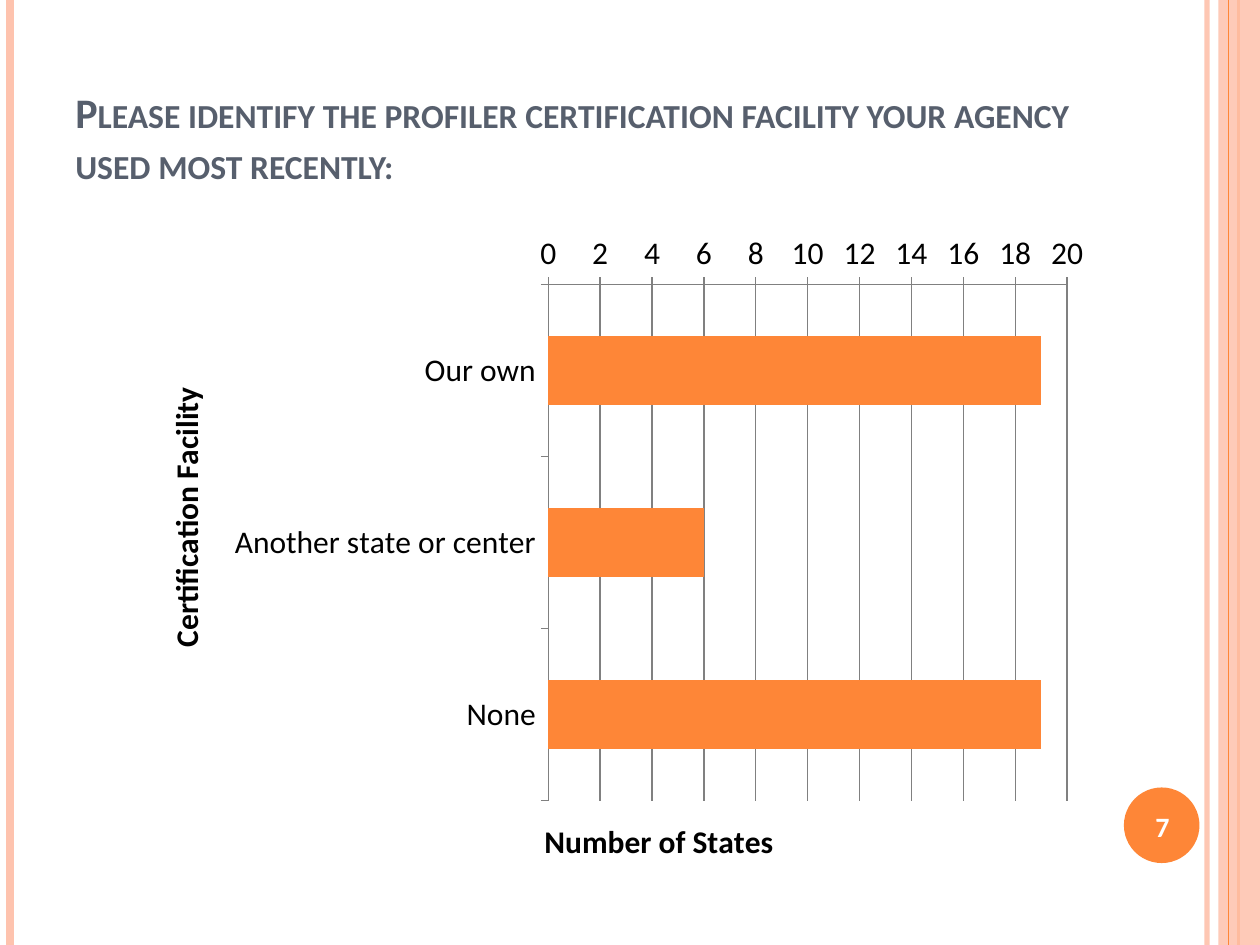
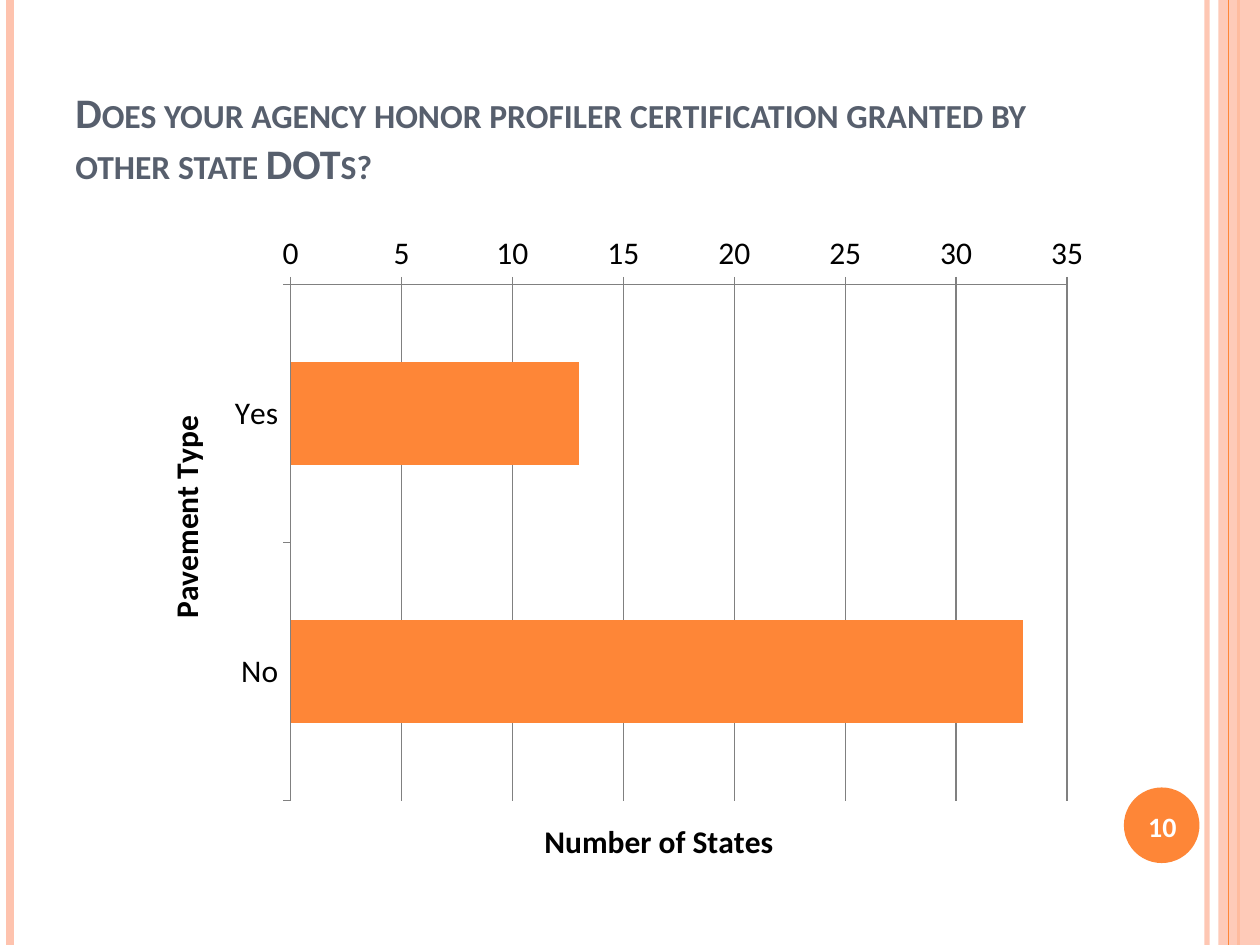
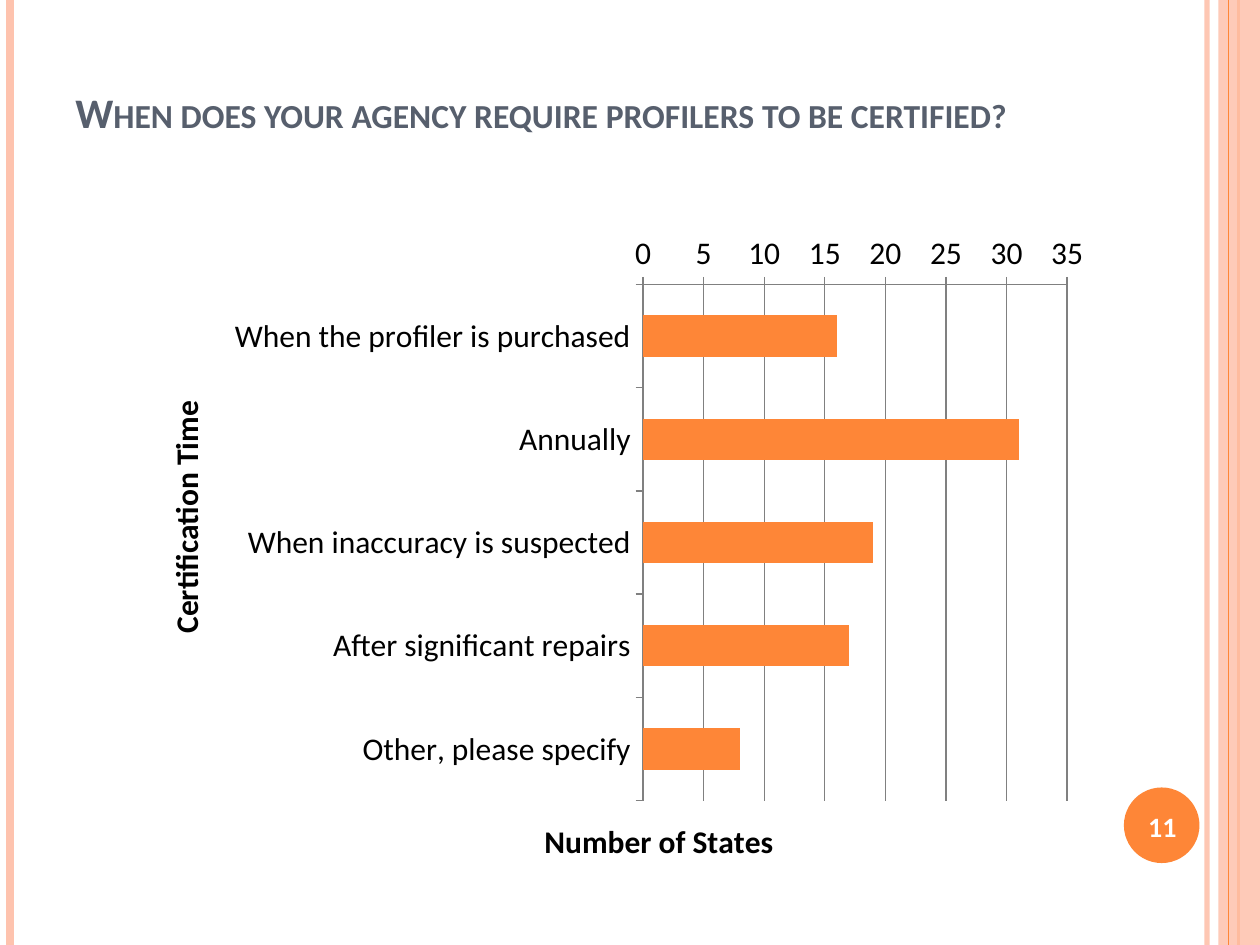
from lxml.etree import SubElement
from pptx import Presentation
from pptx.chart.data import CategoryChartData
from pptx.dml.color import RGBColor
from pptx.enum.chart import XL_CHART_TYPE as ChartType, XL_TICK_MARK as TickMark
from pptx.enum.shapes import MSO_CONNECTOR as Connector, MSO_SHAPE as Shape
from pptx.enum.text import MSO_ANCHOR as Anchor, PP_ALIGN as Align
from pptx.oxml.ns import qn
from pptx.util import Inches, Pt

WIDTH, HEIGHT = 10, 7.5
FONT = "Calibri"
ORANGE = RGBColor(0xFE, 0x86, 0x37)
PEACH = RGBColor(0xFE, 0xC3, 0xAE)
SLATE = RGBColor(0x57, 0x5F, 0x6D)
GRID_GREY = RGBColor(0x80, 0x80, 0x80)
BLACK = RGBColor(0, 0, 0)
WHITE = RGBColor(0xFF, 0xFF, 0xFF)

# Page number, question, category axis title, answers with counts of states
SURVEY = [
    (7, "Please identify the profiler certification facility your agency "
        "used most recently:",
     "Certification Facility",
     {"Our own": 19, "Another state or center": 6, "None": 19}),
    (10, "Does your agency honor profiler certification granted by "
         "other state DOTs?",
     "Pavement Type", {"Yes": 13, "No": 33}),
    (11, "When does your agency require profilers to be certified?",
     "Certification Time",
     {"When the profiler is purchased": 16, "Annually": 31,
      "When inaccuracy is suspected": 19, "After significant repairs": 17,
      "Other, please specify": 8}),
]


def area(left, top, width, height):
    return [Inches(length) for length in (left, top, width, height)]


def set_opacity(color_format_parent, percent):
    """Add an alpha value to the solid colour inside the given XML element."""
    color = next(color_format_parent.iter(qn("a:srgbClr")))
    SubElement(color, qn("a:alpha")).set("val", str(percent * 1000))


def style_font(font, size, color, bold=False):
    font.name, font.size, font.bold = FONT, Pt(size), bold
    font.color.rgb = color


def add_text(page, text, place, size, color, bold=True, align=Align.LEFT,
             anchor=Anchor.TOP, small_caps=False):
    frame = page.shapes.add_textbox(*area(*place)).text_frame
    frame.word_wrap = True
    frame.vertical_anchor = anchor
    para = frame.paragraphs[0]
    para.alignment = align
    span = para.add_run()
    span.text = text
    style_font(span.font, size, color, bold)
    if small_caps:
        span.font._element.set("cap", "small")


def add_stripe(page, x, color, weight, opacity=100):
    stripe = page.shapes.add_connector(
        Connector.STRAIGHT, Inches(x), 0, Inches(x), Inches(HEIGHT))
    stripe.line.color.rgb = color
    stripe.line.width = Pt(weight)
    properties = stripe._element.spPr
    if opacity < 100:
        set_opacity(properties, opacity)
    SubElement(properties, qn("a:effectLst"))


def add_filled(page, kind, place, color, opacity=100):
    shape = page.shapes.add_shape(kind, *area(*place))
    shape.shadow.inherit = False
    shape.fill.solid()
    shape.fill.fore_color.rgb = color
    shape.line.fill.background()
    if opacity < 100:
        set_opacity(shape._element.spPr, opacity)


def add_frame(page, number):
    # Stripes along both sides and the page number badge
    add_stripe(page, 9.58, PEACH, 3, opacity=93)
    add_stripe(page, 0.08, PEACH, 4.5)
    add_stripe(page, 9.83, ORANGE, 1.5)
    add_filled(page, Shape.RECTANGLE, (9.67, 0, WIDTH - 9.67, HEIGHT), PEACH, opacity=87)
    add_stripe(page, 9.75, ORANGE, 0.75)
    add_filled(page, Shape.OVAL, (8.92, 6.25, 0.6, 0.6), ORANGE)
    add_text(page, str(number), (8.89, 6.27, 0.67, 0.57), size=16, color=WHITE,
             align=Align.CENTER, anchor=Anchor.MIDDLE)


def style_axis(axis, title):
    axis.major_tick_mark = TickMark.OUTSIDE
    axis.minor_tick_mark = TickMark.NONE
    axis.format.line.color.rgb = GRID_GREY
    style_font(axis.tick_labels.font, 18, BLACK)
    para = axis.axis_title.text_frame.paragraphs[0]
    span = para.add_run()
    span.text = title
    style_font(span.font, 18, BLACK, bold=True)


def add_bar_chart(page, category_title, answers):
    data = CategoryChartData()
    data.categories = answers.keys()
    data.add_series("Series 1", answers.values())
    chart = page.shapes.add_chart(
        ChartType.BAR_CLUSTERED, *area(1.08, 1.75, 7.67, 5.33), data).chart
    chart.has_legend = False
    chart.has_title = False
    style_font(chart.font, 18, BLACK)

    # First answer on top, which moves the value axis above the bars
    style_axis(chart.category_axis, category_title)
    chart.category_axis.reverse_order = True
    style_axis(chart.value_axis, "Number of States")
    chart.value_axis.has_major_gridlines = True
    chart.value_axis.major_gridlines.format.line.color.rgb = GRID_GREY

    plot = chart.plots[0]
    plot.gap_width = 150
    plot.vary_by_categories = False
    fill = plot.series[0].format.fill
    fill.solid()
    fill.fore_color.rgb = ORANGE


def main():
    deck = Presentation()
    deck.slide_width, deck.slide_height = Inches(WIDTH), Inches(HEIGHT)
    for number, question, category_title, answers in SURVEY:
        page = deck.slides.add_slide(deck.slide_layouts[6])
        add_frame(page, number)
        add_text(page, question, (0.5, 0.64, 8.17, 0.91), size=24, color=SLATE,
                 small_caps=True)
        add_bar_chart(page, category_title, answers)
    deck.save("out.pptx")


if __name__ == "__main__":
    main()
